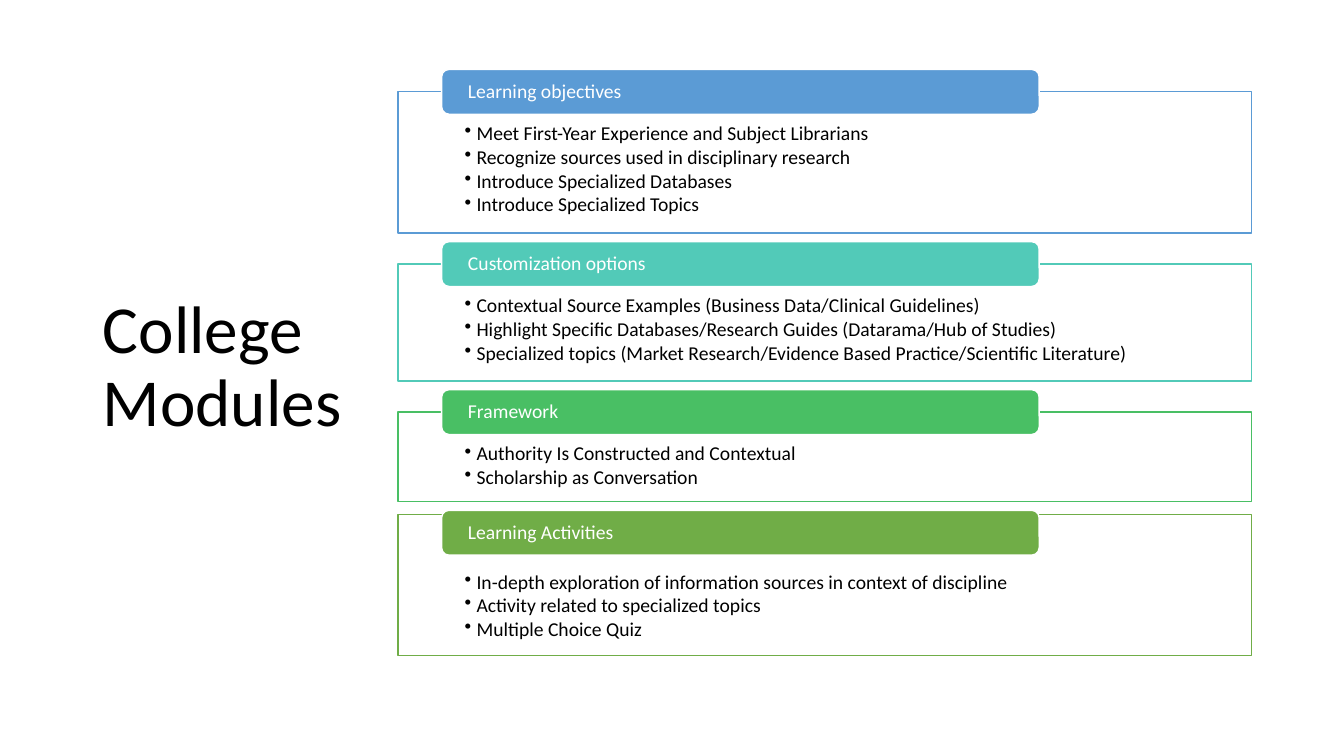
"""Build the College Modules slide: a title beside four headed, bulleted panels."""
from lxml import etree
from pptx import Presentation
from pptx.dml.color import RGBColor
from pptx.enum.shapes import MSO_SHAPE
from pptx.enum.text import MSO_ANCHOR, PP_ALIGN
from pptx.oxml.ns import qn
from pptx.util import Cm, Pt

RECTANGLE = MSO_SHAPE.RECTANGLE
ROUNDED = MSO_SHAPE.ROUNDED_RECTANGLE
TOP, MIDDLE = MSO_ANCHOR.TOP, MSO_ANCHOR.MIDDLE
LEFT = PP_ALIGN.LEFT

COLORS = {
    "black": "000000",
    "white": "FFFFFF",
    "blue": "5B9BD5",
    "teal": "52CAB8",
    "green": "49BF64",
    "olive": "70AD47",
}
FONT = "Calibri"
TITLE_LINES = ["College", "Modules"]

MODULES = [
    {"heading": "Learning objectives", "color": "blue",
     "height": 3.56, "overlap": 0.56, "inset": 0.81,
     "items": ["Meet First-Year Experience and Subject Librarians",
               "Recognize sources used in disciplinary research",
               "Introduce Specialized Databases",
               "Introduce Specialized Topics"]},
    {"heading": "Customization options", "color": "teal",
     "height": 2.95, "overlap": 0.56, "inset": 0.81,
     "items": ["Contextual Source Examples (Business Data/Clinical Guidelines)",
               "Highlight Specific Databases/Research Guides (Datarama/Hub of Studies)",
               "Specialized topics (Market Research/Evidence Based Practice/Scientific Literature)"]},
    {"heading": "Framework", "color": "green",
     "height": 2.26, "overlap": 0.56, "inset": 0.81,
     "items": ["Authority Is Constructed and Contextual",
               "Scholarship as Conversation"]},
    {"heading": "Learning Activities", "color": "olive",
     "height": 3.56, "overlap": 0.1, "inset": 1.46,
     "items": ["In-depth exploration of information sources in context of discipline",
               "Activity related to specialized topics",
               "Multiple Choice Quiz"]},
]

FIRST_TOP, MODULE_GAP = 1.75, 0.22
PANEL_LEFT, PANEL_WIDTH = 10.03, 21.51
HEADER_LEFT, HEADER_WIDTH, HEADER_HEIGHT = 11.13, 15.06, 1.13


def rgb(name):
    return RGBColor.from_string(COLORS[name])


def add_run(paragraph, text, size, color):
    paragraph.alignment = LEFT
    paragraph.line_spacing = 0.9
    run = paragraph.add_run()
    run.text = text
    run.font.name = FONT
    run.font.size = Pt(size)
    run.font.color.rgb = rgb(color)


def set_bullet(paragraph):
    properties = paragraph._p.get_or_add_pPr()
    properties.set("marL", str(Cm(0.3)))
    properties.set("indent", str(Cm(-0.3)))
    etree.SubElement(properties, qn("a:buChar"), char="•")


def add_box(slide, kind, place, fill, line, insets, anchor):
    shape = slide.shapes.add_shape(kind, *(Cm(length) for length in place))
    shape.shadow.inherit = False
    shape.fill.solid()
    shape.fill.fore_color.rgb = rgb(fill)
    shape.line.color.rgb = rgb(line)
    shape.line.width = Pt(1)
    frame = shape.text_frame
    frame.word_wrap = True
    frame.vertical_anchor = anchor
    side, top, bottom = insets
    frame.margin_left = frame.margin_right = Cm(side)
    frame.margin_top, frame.margin_bottom = Cm(top), Cm(bottom)
    return shape


def add_panel(slide, module, top):
    place = (PANEL_LEFT, top, PANEL_WIDTH, module["height"])
    panel = add_box(slide, RECTANGLE, place, "white", module["color"],
                    (1.68, module["inset"], 0.28), TOP)
    fill_color = panel._element.spPr.find(qn("a:solidFill")).find(qn("a:srgbClr"))
    etree.SubElement(fill_color, qn("a:alpha"), val="90000")
    frame = panel.text_frame
    for index, item in enumerate(module["items"]):
        paragraph = frame.add_paragraph() if index else frame.paragraphs[0]
        add_run(paragraph, item, 14, "black")
        paragraph.space_after = Pt(1.8)
        set_bullet(paragraph)


def add_header(slide, module, top):
    place = (HEADER_LEFT, top, HEADER_WIDTH, HEADER_HEIGHT)
    header = add_box(slide, ROUNDED, place, module["color"], "white",
                     (0.61, 0, 0), MIDDLE)
    add_run(header.text_frame.paragraphs[0], module["heading"], 14, "white")


def add_title(slide):
    title = slide.shapes.title
    title.left, title.top = Cm(2.34), Cm(1.55)
    title.width, title.height = Cm(9.37), Cm(15.47)
    title.text_frame.word_wrap = True
    title.text_frame.vertical_anchor = MIDDLE
    paragraph = title.text_frame.paragraphs[0]
    for index, line in enumerate(TITLE_LINES):
        if index:
            paragraph.add_line_break()
        add_run(paragraph, line, 48, "black")


def main():
    presentation = Presentation()
    presentation.slide_width, presentation.slide_height = Cm(33.87), Cm(19.05)
    slide = presentation.slides.add_slide(presentation.slide_layouts[5])
    add_title(slide)
    header_top = FIRST_TOP
    for module in MODULES:
        panel_top = header_top + module["overlap"]
        add_panel(slide, module, panel_top)
        add_header(slide, module, header_top)
        header_top = panel_top + module["height"] + MODULE_GAP
    presentation.save("out.pptx")


if __name__ == "__main__":
    main()
